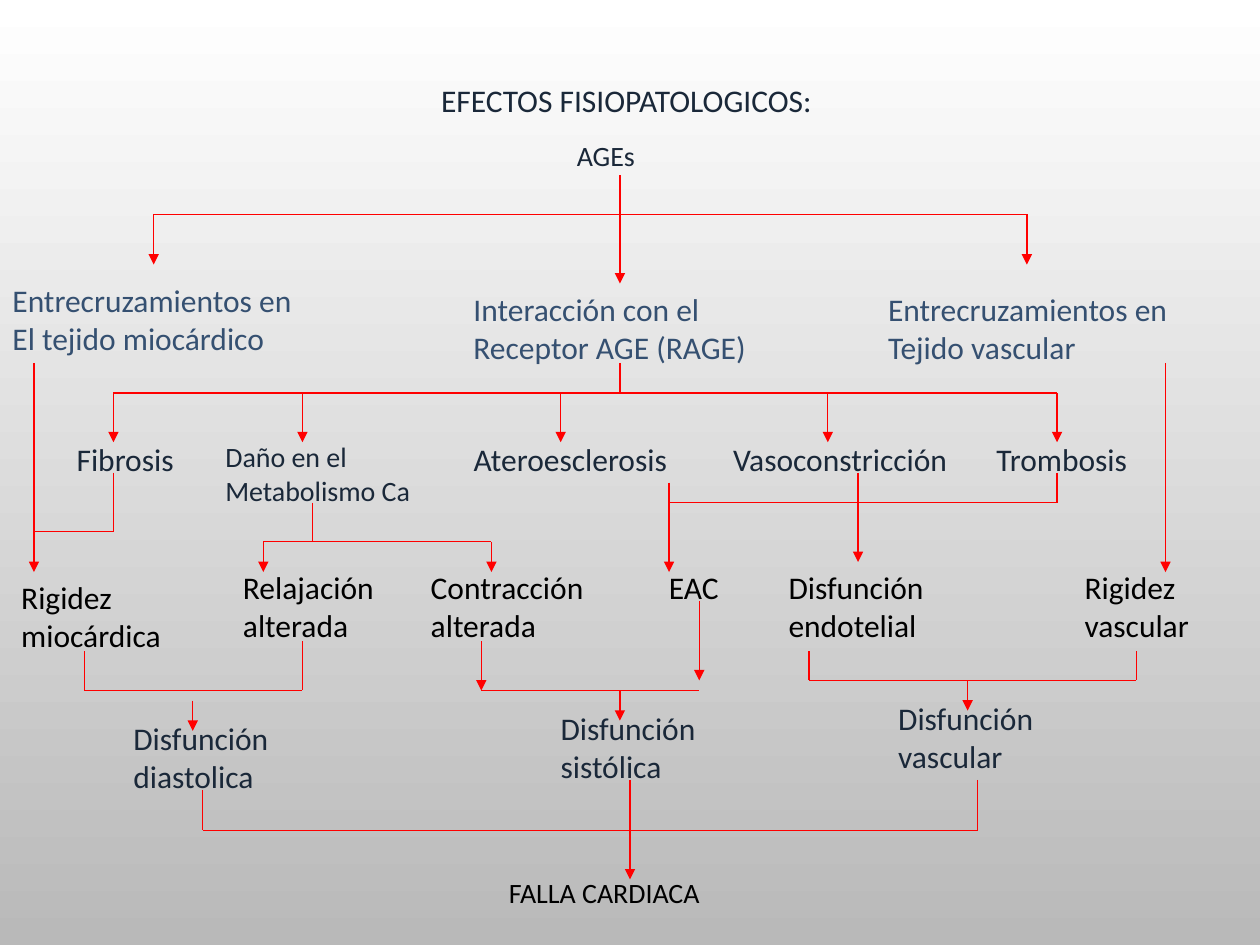
from pptx import Presentation
from pptx.dml.color import RGBColor as RGB
from pptx.enum.shapes import MSO_CONNECTOR as Link
from pptx.enum.text import MSO_ANCHOR as Anchor, MSO_AUTO_SIZE as Fit, PP_ALIGN as Align
from pptx.oxml.ns import qn
from pptx.util import Inches, Pt
from lxml.etree import SubElement

HUES = {"navy": "1A2839", "blue": "355071", "black": "000000",
        "red": "FF0000", "top": "FFFFFF", "base": "B9B9B9"}
FRAME = {"word_wrap": False, "auto_size": Fit.SHAPE_TO_FIT_TEXT}
HEAD = {"word_wrap": True, "auto_size": Fit.NONE, "vertical_anchor": Anchor.TOP}


def write(box, lines, hue, size, frame):
    body = box.text_frame
    for name, value in frame.items():
        setattr(body, name, value)
    body.text = "\n".join(lines)
    for para in body.paragraphs:
        para.alignment = Align.LEFT
        for name, value in {"name": "Calibri", "size": Pt(size)}.items():
            setattr(para.font, name, value)
        para.font.color.rgb = RGB.from_string(HUES[hue])


def join(x1, y1, x2, y2, arrow=False):
    line = slide.shapes.add_connector(Link.STRAIGHT, *map(Inches, (x1, y1, x2, y2)))
    line.line.width = Pt(0.75)
    line.line.color.rgb = RGB.from_string(HUES["red"])
    if arrow:
        SubElement(line.line._get_or_add_ln(), qn("a:tailEnd"), type="triangle")
    SubElement(line._element.spPr, qn("a:effectLst"))


deck = Presentation()
deck.slide_width, deck.slide_height = Inches(10), Inches(7.5)
slide = deck.slides.add_slide(deck.slide_layouts[5])

# Background fades from white to grey, top to bottom
fill = slide.background.fill
fill.gradient()
fill.gradient_angle = 270
for stop, hue, spot in zip(fill.gradient_stops, ("top", "base"), (0, 1)):
    stop.color.rgb = RGB.from_string(HUES[hue])
    stop.position = spot

# Title
title = slide.shapes.title
place = {"left": 3.4, "top": 0.59, "width": 4.41, "height": 1}
for name, value in place.items():
    setattr(title, name, Inches(value))
write(title, ["EFECTOS FISIOPATOLOGICOS:"], "navy", 18, HEAD)

# Labels, level by level: left, top, width, hue, size, lines
labels = [
    # Cause
    (4.48, 1.05, 0.67, "navy", 16, ["AGEs"]),
    # Mechanisms
    (0, 2.18, 3.48, "blue", 18, ["Entrecruzamientos en", "El tejido miocárdico"]),
    (3.66, 2.25, 2.77, "blue", 18, ["Interacción con el", "Receptor AGE (RAGE)"]),
    (6.95, 2.25, 2.66, "blue", 18, ["Entrecruzamientos en", "Tejido vascular"]),
    # Damage
    (0.51, 3.44, 1.04, "navy", 18, ["Fibrosis"]),
    (1.69, 3.44, 1.68, "navy", 16, ["Daño en el", "Metabolismo Ca"]),
    (3.66, 3.44, 1.81, "navy", 18, ["Ateroesclerosis"]),
    (5.72, 3.44, 1.98, "navy", 18, ["Vasoconstricción"]),
    (7.81, 3.44, 1.31, "navy", 18, ["Trombosis"]),
    # Effects
    (0.07, 4.54, 1.83, "black", 18, ["Rigidez", "miocárdica"]),
    (1.83, 4.46, 1.38, "black", 18, ["Relajación", "alterada"]),
    (3.32, 4.46, 1.55, "black", 18, ["Contracción", "alterada"]),
    (5.21, 4.46, 0.72, "black", 18, ["EAC"]),
    (6.16, 4.46, 1.38, "black", 18, ["Disfunción", "endotelial"]),
    (8.51, 4.46, 1.14, "black", 18, ["Rigidez", "vascular"]),
    # Dysfunctions
    (0.96, 5.66, 1.29, "navy", 18, ["Disfunción", "diastolica"]),
    (4.35, 5.58, 1.29, "navy", 18, ["Disfunción", "sistólica"]),
    (7.03, 5.5, 1.29, "navy", 18, ["Disfunción", "vascular"]),
    # Outcome
    (3.94, 6.9, 2.08, "black", 16, ["FALLA CARDIACA"]),
]
for left, top, width, hue, size, lines in labels:
    high = 0.71 if len(lines) == 2 else 0.4
    box = slide.shapes.add_textbox(*map(Inches, (left, top, width, high)))
    write(box, lines, hue, size, FRAME)

# Level bars: y, from x, to x
bars = [(1.7, 1.22, 8.15), (3.12, 0.9, 8.39), (4.22, 0.27, 0.9),
        (4.3, 2.09, 3.9), (3.99, 5.31, 8.39), (5.4, 6.42, 9.02),
        (5.48, 3.82, 5.55), (5.48, 0.67, 2.4), (6.59, 1.61, 7.76)]
for y, x1, x2 in bars:
    join(x1, y, x2, y)

# Plain stems: from y, to y, every x
stems = [(2.88, 3.12, [4.92]), (3.75, 4.22, [0.9]), (3.99, 4.3, [2.48]),
         (3.75, 3.99, [8.39]), (5.17, 5.4, [6.42, 9.02]), (5.17, 5.48, [0.67]),
         (5.09, 5.48, [2.4]), (6.27, 6.59, [1.61]), (6.19, 6.59, [7.76])]

# Arrows down: from y, to y, every x
drops = [(1.39, 2.25, [4.92]), (1.7, 2.1, [1.22, 8.15]), (2.88, 4.54, [0.27, 9.25]),
         (3.12, 3.51, [0.9, 2.4, 4.45, 6.57, 8.39]), (4.3, 4.54, [2.09, 3.9]),
         (3.83, 4.54, [5.31]), (3.75, 4.46, [6.81]), (4.77, 5.4, [5.55]),
         (5.09, 5.48, [3.82]), (5.56, 5.8, [1.53]), (5.48, 5.72, [4.92]),
         (5.4, 5.64, [7.68]), (6.19, 6.98, [5])]
for group, arrow in ((stems, False), (drops, True)):
    for y1, y2, spots in group:
        for x in spots:
            join(x, y1, x, y2, arrow)

deck.save("out.pptx")
